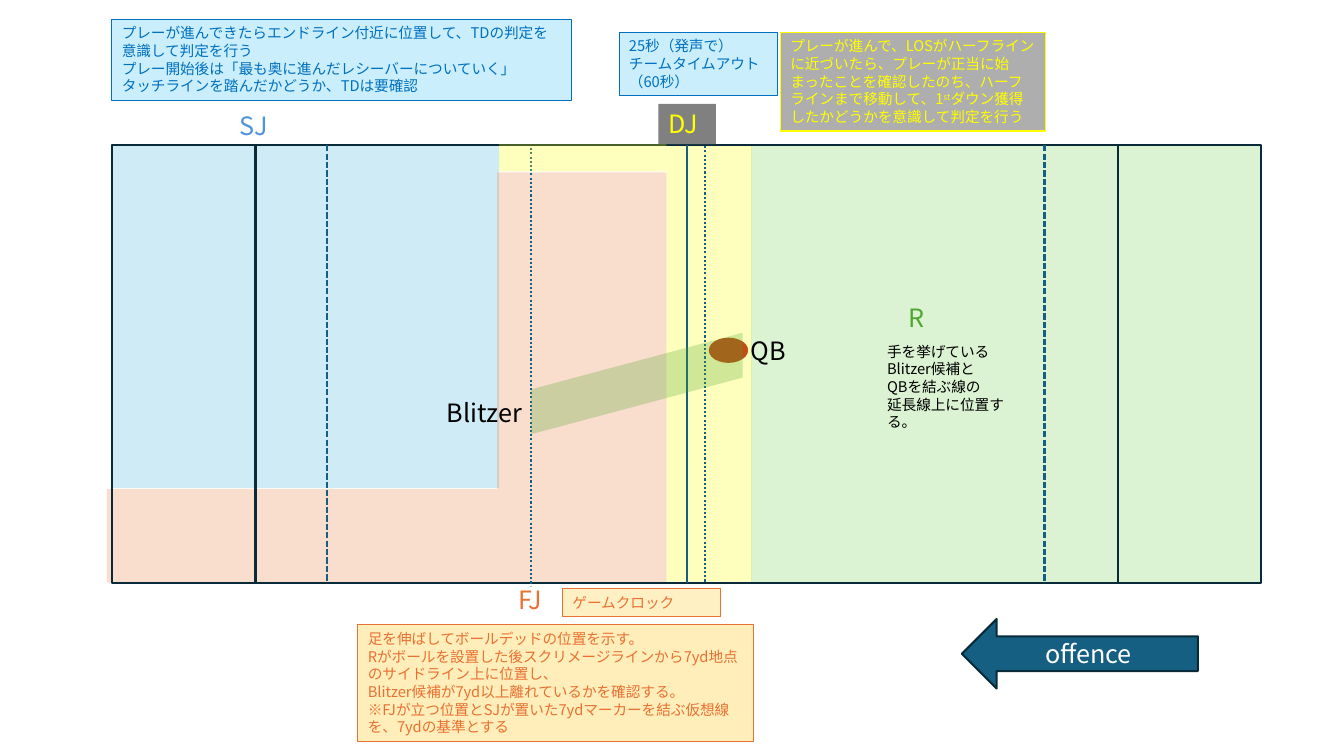
from dataclasses import dataclass
from typing import Optional

import pptx
import pptx.dml.color
import pptx.enum.dml
import pptx.enum.shapes
import pptx.enum.text
import pptx.oxml
import pptx.oxml.ns
import pptx.util

Inches = pptx.util.Inches
Pt = pptx.util.Pt
RGBColor = pptx.dml.color.RGBColor
SHAPE = pptx.enum.shapes.MSO_SHAPE
DASH = pptx.enum.dml.MSO_LINE
ALIGN = pptx.enum.text.PP_ALIGN
ANCHOR = pptx.enum.text.MSO_ANCHOR
AUTO_SIZE = pptx.enum.text.MSO_AUTO_SIZE
qn = pptx.oxml.ns.qn

FONT = "Noto Sans CJK JP"
BLACK = RGBColor(0x00, 0x00, 0x00)
WHITE = RGBColor(0xFF, 0xFF, 0xFF)
NAVY = RGBColor(0x09, 0x2A, 0x39)
TEAL = RGBColor(0x15, 0x60, 0x82)
SKY = RGBColor(0x0F, 0x9E, 0xD5)
PALE_BLUE = RGBColor(0xCA, 0xEE, 0xFB)
BLUE = RGBColor(0x00, 0x70, 0xC0)
SJ_BLUE = RGBColor(0x4E, 0x95, 0xD9)
ORANGE = RGBColor(0xE9, 0x71, 0x32)
AMBER = RGBColor(0xFF, 0xC0, 0x00)
BROWN = RGBColor(0xC0, 0x4F, 0x15)
YELLOW = RGBColor(0xFF, 0xFF, 0x00)
LIME = RGBColor(0x8E, 0xD9, 0x73)
GREEN = RGBColor(0x4E, 0xA7, 0x2E)
GREY = RGBColor(0x80, 0x80, 0x80)
LIGHT_GREY = RGBColor(0xAE, 0xAE, 0xAE)

FIELD_TOP, FIELD_HEIGHT = 1.44, 4.34


@dataclass
class Box:
    left: float
    top: float
    width: float
    height: float
    fill: Optional[RGBColor] = None
    opacity: int = 100
    line: Optional[RGBColor] = None
    line_width: float = 0.75
    kind: int = SHAPE.RECTANGLE


@dataclass
class Note:
    box: Box
    color: RGBColor
    paragraphs: tuple[str, ...]  # text between carets is superscript
    size: float = 10.5


@dataclass
class YardLine:
    x: float
    top: float = FIELD_TOP
    dash: Optional[int] = None


# Coverage areas of each official, then the area drawn over the field
ZONES = [
    Box(1.11, FIELD_TOP, 3.84, 3.4, SKY, 20),
    Box(1.06, 4.85, 3.87, 0.93, ORANGE, 24),
    Box(6.61, 1.45, 0.85, 4.32, YELLOW, 26),
    Box(7.45, FIELD_TOP, 5.06, FIELD_HEIGHT, LIME, 31),
    Box(4.93, 1.71, 1.68, 4.07, ORANGE, 24),
]
SIDELINE_ZONE = Box(4.95, 1.43, 1.66, 0.27, YELLOW, 26)

FIELD = Box(1.11, FIELD_TOP, 11.4, FIELD_HEIGHT, line=NAVY, line_width=1.5,
            kind=SHAPE.FLOWCHART_PREDEFINED_PROCESS)
BALL = Box(7.03, 3.35, 0.39, 0.25, BROWN, kind=SHAPE.OVAL)
ARROW = Box(9.54, 6.14, 2.34, 0.69, TEAL, line=NAVY, line_width=1.5,
            kind=SHAPE.LEFT_ARROW)
BLITZ_LANE = Box(5.17, 3.59, 2.29, 0.43, GREEN, 27, kind=SHAPE.PARALLELOGRAM)

YARD_LINES = [
    YardLine(6.81),
    YardLine(3.24, dash=DASH.SQUARE_DOT),
    YardLine(10.36, dash=DASH.SQUARE_DOT),
    YardLine(5.27, 1.47, DASH.ROUND_DOT),
    YardLine(6.99, 1.45, DASH.ROUND_DOT),
]

NOTES = [
    # Positions
    Note(Box(4.33, 3.89, 1.25, 0.4), BLACK, ("Blitzer",), 18),
    Note(Box(7.35, 3.28, 1.25, 0.4), BLACK, ("QB",), 18),
    Note(Box(8.91, 2.95, 1.25, 0.4), GREEN, ("R",), 18),
    Note(Box(6.53, 1.03, 0.57, 0.4, GREY), YELLOW, ("DJ",), 18),
    Note(Box(2.28, 1.05, 1.25, 0.4), SJ_BLUE, ("SJ",), 18),
    Note(Box(5.04, 5.75, 1.25, 0.4), ORANGE, ("FJ",), 18),
    # Duties
    Note(Box(7.74, 0.32, 2.63, 0.98, LIGHT_GREY, line=YELLOW), YELLOW, (
        "プレーが進んで、LOSがハーフラインに近づいたら、プレーが正当に始まったことを"
        "確認したのち、ハーフラインまで移動して、1^st^ダウン獲得したかどうかを意識して判定を行う",)),
    Note(Box(5.58, 5.84, 1.57, 0.28, AMBER, 23, ORANGE), ORANGE, ("ゲームクロック",)),
    Note(Box(6.14, 0.32, 1.57, 0.63, PALE_BLUE, line=BLUE), BLUE, (
        "25秒（発声で）", "チームタイムアウト", "（60秒）")),
    Note(Box(3.55, 6.2, 3.92, 1.16, AMBER, 27, ORANGE), ORANGE, (
        "足を伸ばしてボールデッドの位置を示す。",
        "Rがボールを設置した後スクリメージラインから7yd地点のサイドライン上に位置し、",
        "Blitzer候補が7yd以上離れているかを確認する。",
        "※FJが立つ位置とSJが置いた7ydマーカーを結ぶ仮想線を、7ydの基準とする")),
    Note(Box(8.7, 3.35, 1.39, 0.98), BLACK, (
        "手を挙げているBlitzer候補と", "QBを結ぶ線の", "延長線上に位置する。")),
    Note(Box(1.11, 0.19, 4.56, 0.81, PALE_BLUE, line=BLUE), BLUE, (
        "プレーが進んできたらエンドライン付近に位置して、TDの判定を意識して判定を行う",
        "プレー開始後は「最も奥に進んだレシーバーについていく」",
        "タッチラインを踏んだかどうか、TDは要確認")),
]


def style_run(r, size: float, color: RGBColor) -> None:
    r.font.size = Pt(size)
    r.font.name = FONT
    r.font.color.rgb = color
    ea = pptx.oxml.parse_xml(
        f'<a:ea {pptx.oxml.ns.nsdecls("a")} typeface="{FONT}"/>')
    r.font._element.find(qn("a:latin")).addnext(ea)


def paint(sp, box: Box) -> None:
    if box.fill is None:
        sp.fill.background()
    else:
        sp.fill.solid()
        sp.fill.fore_color.rgb = box.fill
        if box.opacity < 100:
            clr = sp.fill._xPr.find(qn("a:solidFill")).find(qn("a:srgbClr"))
            alpha = pptx.oxml.parse_xml(
                f'<a:alpha {pptx.oxml.ns.nsdecls("a")} val="{box.opacity * 1000}"/>')
            clr.append(alpha)
    if box.line is None:
        sp.line.fill.background()
    else:
        sp.line.color.rgb = box.line
        sp.line.width = Pt(box.line_width)


def draw_box(s, box: Box):
    sp = s.shapes.add_shape(box.kind, Inches(box.left), Inches(box.top),
                            Inches(box.width), Inches(box.height))
    sp.shadow.inherit = False
    paint(sp, box)
    return sp


def draw_note(s, note: Note) -> None:
    box = note.box
    sp = s.shapes.add_textbox(Inches(box.left), Inches(box.top),
                              Inches(box.width), Inches(box.height))
    paint(sp, box)
    tf = sp.text_frame
    tf.word_wrap = True
    tf.auto_size = AUTO_SIZE.SHAPE_TO_FIT_TEXT
    for i, text in enumerate(note.paragraphs):
        p = tf.add_paragraph() if i else tf.paragraphs[0]
        for j, piece in enumerate(text.split("^")):
            r = p.add_run()
            r.text = piece
            style_run(r, note.size, note.color)
            if j % 2:
                r.font._element.set("baseline", "30000")


def draw_yard_line(s, yard: YardLine) -> None:
    x, top = Inches(yard.x), Inches(yard.top)
    line = s.shapes.add_connector(pptx.enum.shapes.MSO_CONNECTOR.STRAIGHT,
                                  x, top, x, top + Inches(FIELD_HEIGHT))
    line.line.color.rgb = TEAL
    line.line.width = Pt(1.5)
    if yard.dash is not None:
        line.line.dash_style = yard.dash
    line._element.spPr.append(pptx.oxml.parse_xml(
        f'<a:effectLst {pptx.oxml.ns.nsdecls("a")}/>'))


def main() -> None:
    prs = pptx.Presentation()
    prs.slide_width, prs.slide_height = Inches(13.33), Inches(7.5)
    s = prs.slides.add_slide(prs.slide_layouts[6])

    # Field with its zones and lines
    for box in (*ZONES, FIELD):
        draw_box(s, box)
    for yard in YARD_LINES:
        draw_yard_line(s, yard)

    # Ball and the lane from blitzer to quarterback
    draw_box(s, BALL)
    lane = draw_box(s, BLITZ_LANE)
    lane.rotation = 345
    lane.adjustments[0] = 0.27  # keeps both ends upright

    # Direction of the offence
    tf = draw_box(s, ARROW).text_frame
    tf.text = "offence"
    tf.vertical_anchor = ANCHOR.MIDDLE
    p = tf.paragraphs[0]
    p.alignment = ALIGN.CENTER
    style_run(p.runs[0], 18, WHITE)

    # Labels and notes
    for note in NOTES:
        draw_note(s, note)
    draw_box(s, SIDELINE_ZONE)

    prs.save("out.pptx")


if __name__ == "__main__":
    main()
